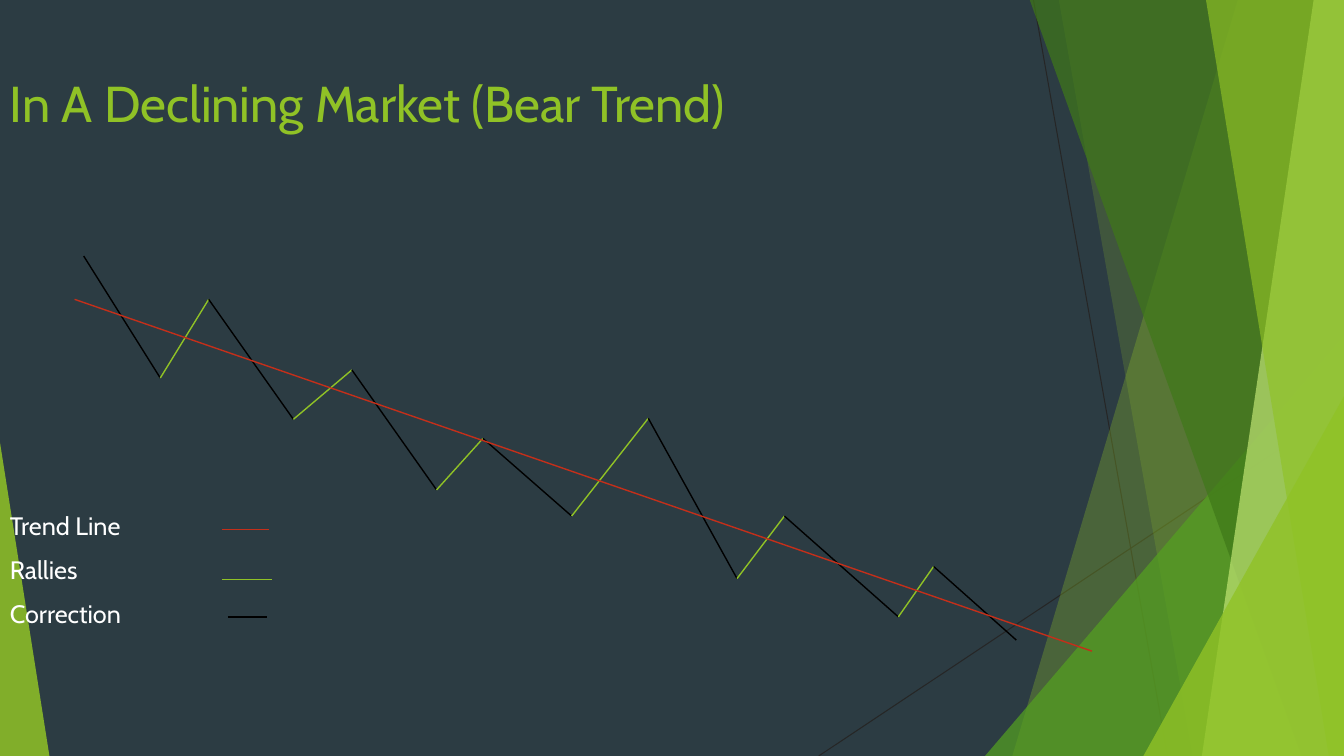
from dataclasses import dataclass
from itertools import cycle, pairwise

from lxml import etree
from pptx import Presentation
from pptx.dml import color as dml
from pptx.enum import shapes, text
from pptx.oxml import ns
from pptx.util import Inches, Pt

COLORS = {
    "background": "2C3C43",
    "hairline": "262626",
    "lime": "90C226",
    "green": "54A021",
    "forest": "3F7819",
    "pale": "C0E474",
    "white": "FFFFFF",
    "correction": "000000",
    "rally": "90C226",
    "trend": "C42F1A",
}
FONT = "Cabin"
WIDTH, HEIGHT = 13.33, 7.5
TOP = -0.01


@dataclass(frozen=True)
class Facet:
    """A band between a slanted left edge and the right side of the slide."""
    top_x: float
    bottom_x: float
    color: str
    opacity: int


@dataclass(frozen=True)
class Wedge:
    """A triangle on the bottom edge; apex is 0 at its left, 1 at its right."""
    left: float
    top: float
    width: float
    apex: float
    color: str
    opacity: int


@dataclass(frozen=True)
class Segment:
    start: tuple[float, float]
    end: tuple[float, float]
    color: str
    weight: float = 1


def rgb(name: str) -> dml.RGBColor:
    return dml.RGBColor.from_string(COLORS[name])


def paint(shape, color: str, opacity: int) -> None:
    shape.shadow.inherit = False
    shape.line.fill.background()
    shape.fill.solid()
    shape.fill.fore_color.rgb = rgb(color)
    srgb = shape.fill._xPr.find(".//" + ns.qn("a:srgbClr"))
    etree.SubElement(srgb, ns.qn("a:alpha"), val=str(opacity * 1000))


def draw_facet(slide, facet: Facet) -> None:
    corners = [(facet.top_x, TOP), (WIDTH, TOP), (WIDTH, HEIGHT), (facet.bottom_x, HEIGHT)]
    points = [(Inches(x), Inches(y)) for x, y in corners]
    builder = slide.shapes.build_freeform(*points[0])
    builder.add_line_segments(points[1:], close=True)
    paint(builder.convert_to_shape(), facet.color, facet.opacity)


def draw_wedge(slide, wedge: Wedge) -> None:
    triangle = slide.shapes.add_shape(
        shapes.MSO_SHAPE.ISOSCELES_TRIANGLE, Inches(wedge.left), Inches(wedge.top),
        Inches(wedge.width), Inches(HEIGHT - wedge.top))
    triangle.adjustments[0] = wedge.apex
    paint(triangle, wedge.color, wedge.opacity)


def draw_segment(slide, segment: Segment) -> None:
    ends = [Inches(value) for value in (*segment.start, *segment.end)]
    line = slide.shapes.add_connector(shapes.MSO_CONNECTOR.STRAIGHT, *ends)
    line.line.color.rgb = rgb(segment.color)
    line.line.width = Pt(segment.weight)
    etree.SubElement(line._element.spPr, ns.qn("a:effectLst"))


def add_text(slide, content: str, *, top: float, height: float, size: float,
             color: str, space_before: float = 0) -> None:
    box = slide.shapes.add_textbox(0, Inches(top), Inches(9.4), Inches(height))
    frame = box.text_frame
    frame.word_wrap = True
    frame.vertical_anchor = text.MSO_ANCHOR.TOP
    frame.text = content
    for index, paragraph in enumerate(frame.paragraphs):
        paragraph.space_before = Pt(space_before if index else 0)
        paragraph.font.name = FONT
        paragraph.font.size = Pt(size)
        paragraph.font.color.rgb = rgb(color)


HAIRLINES = [
    Segment((10.25, 0), (11.58, HEIGHT), "hairline", 0.75),
    Segment((WIDTH, 4.03), (8.12, HEIGHT), "hairline", 0.75),
]
DECORATION = [
    Facet(12.28, 10.04, "lime", 30),
    Facet(10.5, 11.83, "lime", 20),
    Wedge(9.77, 3.33, 3.56, 1, "green", 72),
    Facet(10.21, 12.91, "forest", 70),
    Facet(13.03, 11.92, "pale", 70),
    Facet(11.96, 13.18, "lime", 65),
    Wedge(11.34, 3.93, 1.99, 1, "lime", 80),
    Wedge(0, 4.39, 0.49, 0, "lime", 85),
]
# Turning points of the market: corrections and rallies alternate
PRICE_TURNS = [
    (0.83, 2.54), (1.59, 3.75), (2.07, 2.97), (2.91, 4.16), (3.49, 3.67),
    (4.33, 4.86), (4.79, 4.35), (5.67, 5.12), (6.43, 4.15), (7.31, 5.74),
    (7.78, 5.12), (8.91, 6.12), (9.26, 5.62), (10.08, 6.35),
]
TREND = Segment((0.74, 2.97), (10.83, 6.46), "trend")
LEGEND = {
    "Trend Line": Segment((2.2, 5.25), (2.67, 5.25), "trend"),
    "Rallies": Segment((2.2, 5.75), (2.7, 5.75), "rally"),
    "Correction": Segment((2.26, 6.12), (2.65, 6.12), "correction"),
}


def main() -> None:
    deck = Presentation()
    deck.slide_width, deck.slide_height = Inches(WIDTH), Inches(HEIGHT)
    slide = deck.slides.add_slide(deck.slide_layouts[6])
    slide.background.fill.solid()
    slide.background.fill.fore_color.rgb = rgb("background")

    # Backdrop
    for hairline in HAIRLINES:
        draw_segment(slide, hairline)
    for part in DECORATION:
        if isinstance(part, Facet):
            draw_facet(slide, part)
        else:
            draw_wedge(slide, part)

    # Title and legend labels
    add_text(slide, "In A Declining Market (Bear Trend)",
             top=0.67, height=1.44, size=36, color="lime")
    add_text(slide, "\n".join(LEGEND), top=5.01, height=1.59, size=18,
             color="white", space_before=10)

    # Price path, legend keys and trend line
    for (start, end), color in zip(pairwise(PRICE_TURNS), cycle(("correction", "rally"))):
        draw_segment(slide, Segment(start, end, color))
    for key in LEGEND.values():
        draw_segment(slide, key)
    draw_segment(slide, TREND)

    deck.save("out.pptx")


if __name__ == "__main__":
    main()
